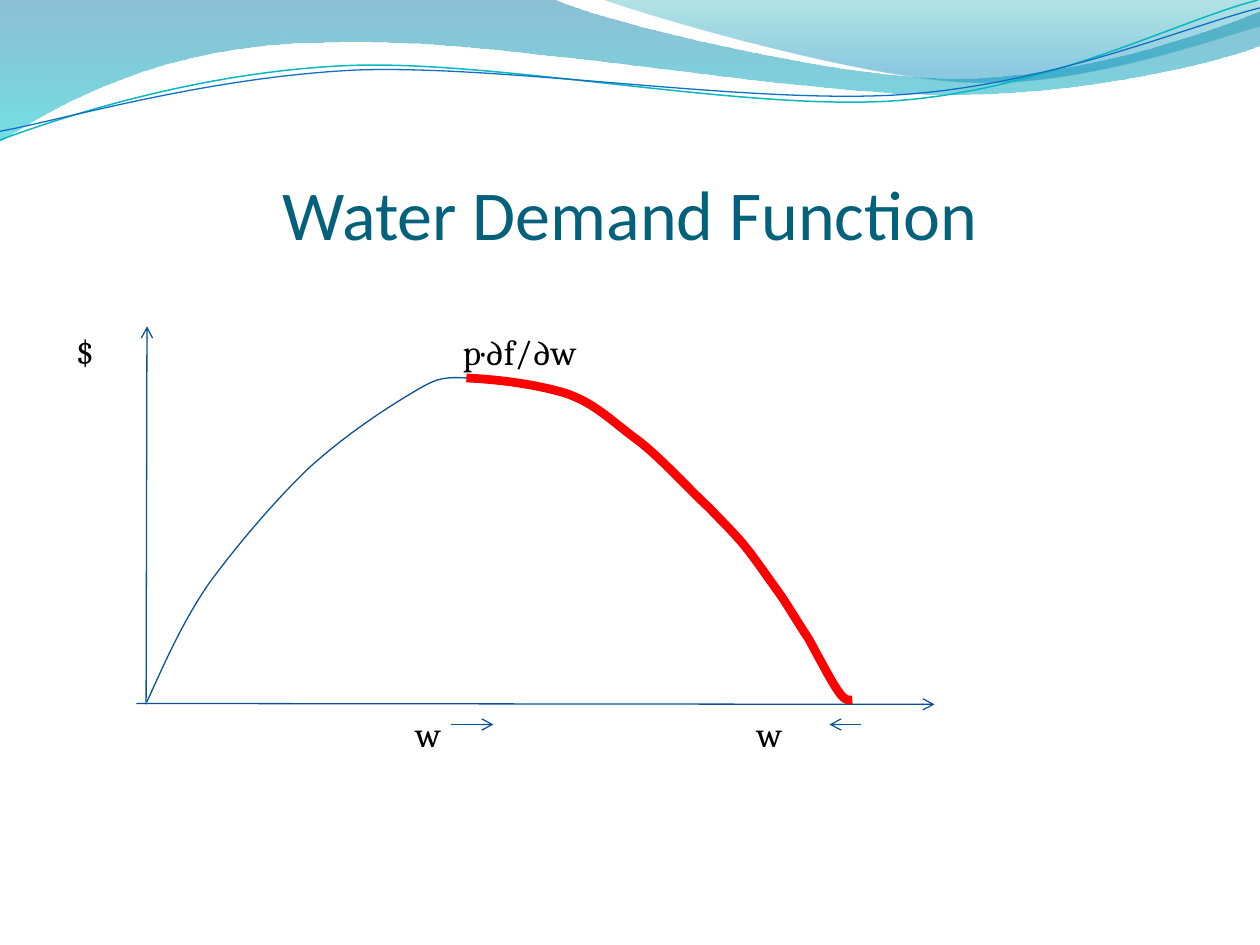
from lxml import etree
from pptx import Presentation
from pptx import util as u
from pptx.dml.color import RGBColor
from pptx.enum import shapes, text
from pptx.oxml.ns import qn

COLORS = {
    "title": "04617B", "label": "000000", "axis": "095295", "demand": "FF0000",
    "teal_line": "0AB8BF", "blue_line": "0F6FC6",
    "wave_top": "0074A1", "wave_bottom": "00C6CF",
    "crest_top": "00A1A9", "crest_bottom": "008BBF",
}

# Outlines in points: a pair is a straight step, a group of six is a Bezier curve.
WAVE = [(0, 0), (317, 0), (343, 12, 478, 45, 546, 45), (614, 45, 690, 19, 720, 6.5),
        (720, 26), (708, 32, 626, 55, 537, 54), (448, 54, 275, 20, 185, 24.5),
        (93, 25, 33, 60, 0, 81)]
CREST = [(345, 0), (366, 8, 491, 45, 554, 47), (616, 50, 692, 23, 720, 15), (720, 0)]
TEAL_LINE = [(0, 80), (35, 67, 114, 41, 199, 37.5), (284, 34, 427, 64, 513, 57.5),
             (600, 51, 675, 11, 719, 0)]
BLUE_LINE = [(0, 75), (34, 69, 118, 44, 204, 40), (290, 37, 430, 60, 516, 54),
             (602, 48, 678, 15, 720, 4.5)]
MARGINAL_VALUE = [
    (84, 401), (94, 379, 104, 356, 119, 334), (135, 312, 158, 285, 177, 267),
    (197, 249, 218, 235, 233, 226), (248, 217, 251, 215, 267, 216),
    (284, 217, 313, 222, 330, 229), (346, 235, 357, 248, 367, 256),
    (378, 264, 383, 269, 391, 276.5), (399, 284, 408, 292, 415, 300),
    (421, 307, 425, 312, 431, 322), (438, 331, 449, 346, 454, 354),
    (460, 363, 461, 366, 464, 372), (468, 378, 473, 387, 477, 392),
    (481, 397, 484, 400, 487, 402)]
DEMAND = [
    (266.5, 216), (287, 217, 308, 220, 324, 225), (341, 231, 351, 242, 365, 252),
    (379, 263, 395, 281, 405, 290), (414, 299.5, 415, 300, 423, 309),
    (430, 317, 439, 330.5, 446, 340), (452, 349, 456, 356, 462, 365),
    (467, 374, 475, 389.5, 479, 395), (483, 401, 485, 400, 487, 400)]


class SlideBuilder:
    def __init__(self, slide):
        self.slide = slide
        self.title_font, self.label_font = "Calibri", "Cambria"

    def color(self, name):
        return RGBColor.from_string(COLORS[name])

    def outline(self, steps, closed=False):
        """Draw a freeform, joining each three control points into one curve."""
        points = [(u.Pt(x), u.Pt(y)) for step in steps
                  for x, y in zip(step[::2], step[1::2])]
        builder = self.slide.shapes.build_freeform(*points[0])
        builder.add_line_segments(points[1:], close=closed)
        shape = builder.convert_to_shape()
        shape.shadow.inherit = False
        segments = iter(list(shape._element.iter(qn("a:lnTo"))))
        for step in steps[1:]:
            segment = next(segments)
            if len(step) == 6:
                curve = etree.Element(qn("a:cubicBezTo"))
                segment.addprevious(curve)
                for part in (segment, next(segments), next(segments)):
                    curve.append(part[0])
                    part.getparent().remove(part)
        return shape

    def curve(self, steps, color, width):
        shape = self.outline(steps)
        shape.fill.background()
        shape.line.color.rgb = self.color(color)
        shape.line.width = u.Pt(width)

    def band(self, steps, stops):
        """Fill an outline downwards; stops are (position, color, opacity %)."""
        shape = self.outline(steps, closed=True)
        shape.line.fill.background()
        shape.fill.gradient()
        shape.fill.gradient_angle = 270
        for stop, (position, color, _) in zip(shape.fill.gradient_stops, stops):
            stop.position = position
            stop.color.rgb = self.color(color)
        for element, (_, _, opacity) in zip(shape._element.iter(qn("a:srgbClr")), stops):
            etree.SubElement(element, qn("a:alpha"), val=str(opacity * 1000))

    def arrow(self, *ends):
        connector = self.slide.shapes.add_connector(
            shapes.MSO_CONNECTOR.STRAIGHT, *map(u.Pt, ends))
        connector.line.color.rgb = self.color("axis")
        connector.line.width = u.Pt(0.75)
        line = connector._element.spPr.find(qn("a:ln"))
        etree.SubElement(line, qn("a:tailEnd"), type="arrow")
        etree.SubElement(connector._element.spPr, qn("a:effectLst"))

    def text_box(self, words, box, font, size, color,
                 align=text.PP_ALIGN.LEFT, anchor=text.MSO_ANCHOR.TOP):
        frame = self.slide.shapes.add_textbox(*map(u.Pt, box)).text_frame
        frame.word_wrap = True
        frame.vertical_anchor = anchor
        frame.margin_left = frame.margin_right = frame.margin_top = frame.margin_bottom = 0
        paragraph = frame.paragraphs[0]
        paragraph.alignment = align
        run = paragraph.add_run()
        run.text = words
        run.font.name, run.font.size = font, u.Pt(size)
        run.font.color.rgb = self.color(color)

    def title(self, words):
        self.text_box(words, (36, 55.5, 648, 90), self.title_font, 40, "title",
                      text.PP_ALIGN.CENTER, text.MSO_ANCHOR.BOTTOM)

    def label(self, words, left, top, width=24):
        self.text_box(words, (left, top, width, 28), self.label_font, 20, "label")


def main():
    presentation = Presentation()
    presentation.slide_width, presentation.slide_height = u.Pt(720), u.Pt(540)
    builder = SlideBuilder(presentation.slides.add_slide(presentation.slide_layouts[6]))

    builder.band(WAVE, [(0, "wave_top", 45), (1, "wave_bottom", 55)])
    builder.band(CREST, [(0, "crest_top", 30), (0.8, "crest_bottom", 45)])
    builder.curve(TEAL_LINE, "teal_line", 0.85)
    builder.curve(BLUE_LINE, "blue_line", 0.75)

    builder.title("Water Demand Function")
    builder.label("$", 43.5, 189)
    builder.label("p·∂f/∂w", 264.5, 189, 90)
    for left in (237.5, 432.5):
        builder.label("w", left, 407)

    builder.arrow(78, 402, 534, 402.5)
    builder.arrow(83.5, 402.5, 84, 186.5)
    builder.curve(MARGINAL_VALUE, "axis", 0.75)
    builder.curve(DEMAND, "demand", 5)
    builder.arrow(258, 414, 282, 414)
    builder.arrow(492, 414, 474, 414)

    presentation.save("out.pptx")


if __name__ == "__main__":
    main()
